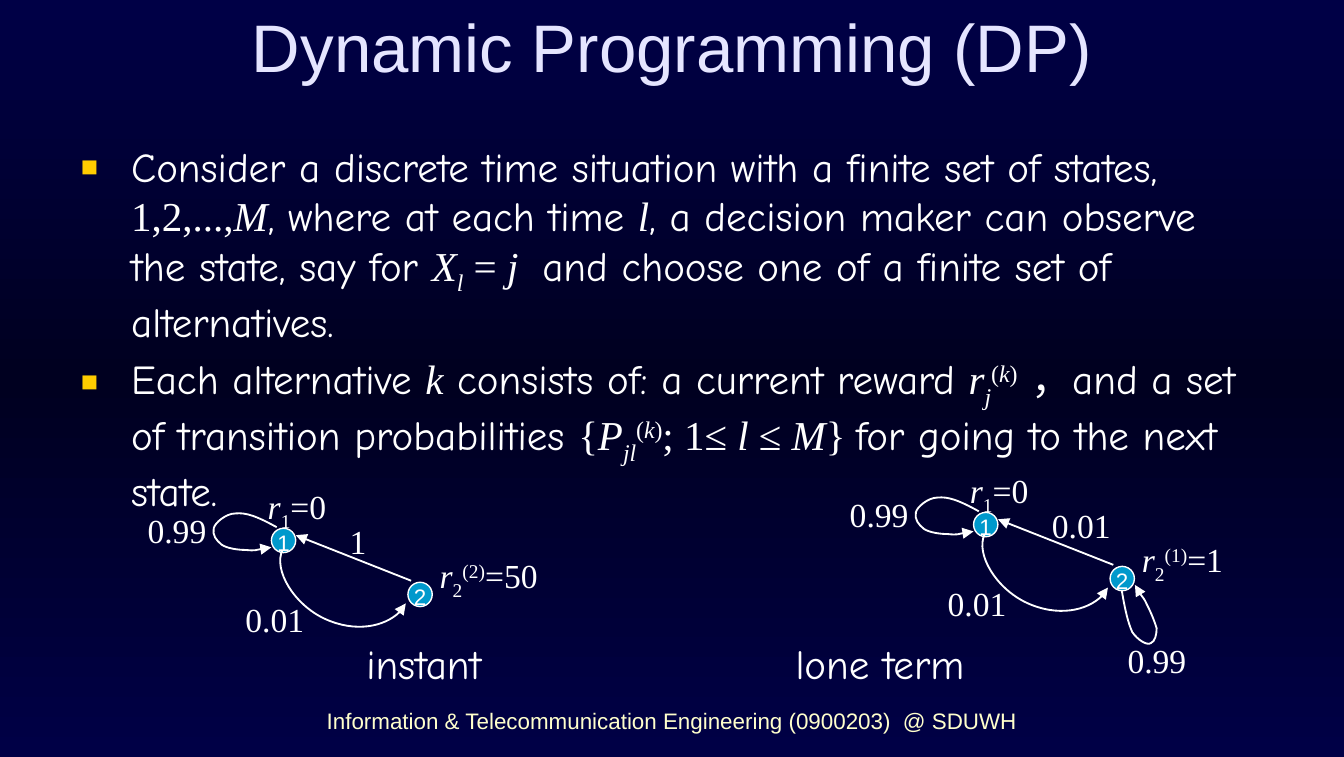
import copy
import dataclasses

import lxml.etree
import pptx
import pptx.dml.color
import pptx.enum.shapes
import pptx.enum.text
import pptx.oxml.ns
import pptx.util

Cm = pptx.util.Cm
Pt = pptx.util.Pt
qn = pptx.oxml.ns.qn
Align = pptx.enum.text.PP_ALIGN
Anchor = pptx.enum.text.MSO_ANCHOR
Fit = pptx.enum.text.MSO_AUTO_SIZE


@dataclasses.dataclass(frozen=True)
class Theme:
    edge: str = "000046"
    core: str = "000020"
    head: str = "E5E5FF"
    text: str = "FFFFFF"
    foot: str = "FFFFCC"
    mark: str = "FFCC00"
    node: str = "0099CC"
    sans: str = "Arial"
    hand: str = "Comic Neue"
    math: str = "Times New Roman"
    big: float = 36
    body: float = 22
    label: float = 18
    small: float = 12


THEME = Theme()

STATES = [
    ("Consider a discrete time situation with a finite set of states, ", "h"),
    ("1,2,...,", "m"), ("M", "i"), (", where at each time ", "h"), ("l", "i"),
    (", a decision maker can observe the state, say for ", "h"),
    ("X", "i"), ("l", "i_"), (" = ", "m"), ("j ", "i"),
    (" and choose one of a finite set of alternatives.", "h"),
]
CHOICE = [
    ("Each alternative ", "h"), ("k", "i"),
    (" consists of: a current reward ", "h"),
    ("r", "i"), ("j", "i_"), ("(", "m^"), ("k", "i^"), (")", "m^"),
    (" ，and a set of transition probabilities ", "h"),
    ("{", "m"), ("P", "i"), ("jl", "i_"), ("(", "m^"), ("k", "i^"), (")", "m^"),
    ("; 1≤ ", "m"), ("l", "i"), (" ≤ ", "m"), ("M", "i"), ("} ", "m"),
    ("for going to the next state.", "h"),
]
LOOP_1 = [
    (-0.13, -0.25), (-0.51, -0.46), (-0.71, -0.53), (-0.91, -0.51),
    (-1.09, -0.51), (-1.3, -0.33), (-1.32, -0.23), (-1.35, -0.1),
    (-1.27, 0), (-1.17, 0.08), (-1.07, 0.15), (-0.86, 0.18),
    (-0.71, 0.18), (-0.53, 0.2), (-0.3, 0.13), (-0.23, 0.13),
]
LOOP_2 = [
    (2.57, 1.24), (2.64, 1.65), (2.69, 1.85), (2.77, 2.03),
    (2.87, 2.18), (3.05, 2.29), (3.12, 2.24), (3.2, 2.21),
    (3.23, 2.08), (3.23, 1.96), (3.2, 1.85), (3.12, 1.65),
    (3.05, 1.52), (3, 1.4), (2.84, 1.22), (2.82, 1.14),
]


def color(code):
    return pptx.dml.color.RGBColor.from_string(code)


def style(run, face, size, tint):
    run.font.name = face
    run.font.size = Pt(size)
    run.font.color.rgb = color(tint)


def write(para, parts, size):
    for text, kind in parts:
        run = para.add_run()
        run.text = text
        style(run, THEME.hand if kind[0] == "h" else THEME.math, size, THEME.text)
        run.font.italic = kind[0] == "i"
        if kind[1:]:
            shift = {"_": "-25000", "^": "30000"}[kind[1]]
            run.font._element.set("baseline", shift)


def bullet(para):
    props = para._p.get_or_add_pPr()
    props.set("marL", str(Cm(0.95)))
    props.set("indent", str(-Cm(0.95)))
    tint = lxml.etree.SubElement(props, qn("a:buClr"))
    lxml.etree.SubElement(tint, qn("a:srgbClr"), val=THEME.mark)
    lxml.etree.SubElement(props, qn("a:buSzPct"), val="70000")
    lxml.etree.SubElement(props, qn("a:buFont"), typeface=THEME.sans)
    lxml.etree.SubElement(props, qn("a:buChar"), char="■")


def add_box(shapes, x, y, wide, high, wrap=True):
    box = shapes.add_textbox(Cm(x), Cm(y), Cm(wide), Cm(high))
    box.text_frame.word_wrap = wrap
    return box.text_frame


def add_line(shapes, x, y, wide, high, face, size, tint, text):
    frame = add_box(shapes, x, y, wide, high)
    frame.text = text
    frame.paragraphs[0].alignment = Align.CENTER
    style(frame.paragraphs[0].runs[0], face, size, tint)
    return frame


def add_label(shapes, x, y, wide, parts):
    frame = add_box(shapes, x, y, wide, 1.02, wrap=False)
    frame.auto_size = Fit.SHAPE_TO_FIT_TEXT
    write(frame.paragraphs[0], parts, THEME.label)


def add_node(shapes, x, y, text):
    size = 0.46
    oval = pptx.enum.shapes.MSO_SHAPE.OVAL
    node = shapes.add_shape(oval, Cm(x - size / 2), Cm(y - size / 2), Cm(size), Cm(size))
    node.shadow.inherit = False
    node.fill.solid()
    node.fill.fore_color.rgb = color(THEME.node)
    node.line.color.rgb = color(THEME.text)
    node.line.width = Pt(0.75)
    frame = node.text_frame
    frame.margin_left = frame.margin_right = frame.margin_top = frame.margin_bottom = 0
    frame.vertical_anchor = Anchor.TOP
    frame.text = text
    para = frame.paragraphs[0]
    para.alignment = Align.CENTER
    para.line_spacing = Pt(13)
    style(para.runs[0], THEME.sans, THEME.small, THEME.text)


def arrow(shape):
    shape.line.color.rgb = color(THEME.text)
    shape.line.width = Pt(1)
    line = shape.line._get_or_add_ln()
    lxml.etree.SubElement(line, qn("a:tailEnd"), type="triangle")


def add_link(shapes, kind, start, end):
    link = shapes.add_connector(kind, *map(Cm, start + end))
    arrow(link)
    lxml.etree.SubElement(link._element.spPr, qn("a:effectLst"))
    return link


def add_arc(shapes, x, y):
    wide, high = 0.07, 2.54
    kind = pptx.enum.shapes.MSO_CONNECTOR.CURVE
    start = (x + wide / 2, y + high / 2)
    end = (x - wide / 2, y - high / 2)
    props = add_link(shapes, kind, start, end)._element.spPr
    props.find(qn("a:xfrm")).set("rot", str(115 * 60000))
    guides = props.find(qn("a:prstGeom")).find(qn("a:avLst"))
    lxml.etree.SubElement(guides, qn("a:gd"), name="adj1", fmla="val -1200000")


def add_loop(shapes, x, y, spots):
    points = [(Cm(x + dx), Cm(y + dy)) for dx, dy in spots]
    maker = shapes.build_freeform(*points[0])
    maker.add_line_segments(points[1:], close=False)
    loop = maker.convert_to_shape()
    loop.shadow.inherit = False
    loop.fill.background()
    arrow(loop)
    steps = list(loop._element.iter(qn("a:lnTo")))
    track = steps[0].getparent()
    for i in range(0, len(steps), 3):
        curve = lxml.etree.SubElement(track, qn("a:cubicBezTo"))
        for step in steps[i:i + 3]:
            curve.append(step[0])
            track.remove(step)


def add_graph(slide, x, y, back, power, gain, wide, stay):
    shapes = slide.shapes.add_group_shape().shapes
    add_node(shapes, x, y, "1")
    add_node(shapes, x + 2.58, y + 1.02, "2")
    kind = pptx.enum.shapes.MSO_CONNECTOR.STRAIGHT
    add_link(shapes, kind, (x + 2.41, y + 0.76), (x + 0.23, y - 0.1))
    add_loop(shapes, x, y, LOOP_1)
    add_arc(shapes, x + 1.14, y + 0.69)
    add_label(shapes, x - 2.82, y - 0.7, 1.63, [("0.99", "m")])
    add_label(shapes, x + 1, y - 0.49, 0.84 if back == "1" else 1.63, [(back, "m")])
    add_label(shapes, x - 0.97, y + 0.97, 1.63, [("0.01", "m")])
    add_label(shapes, x - 0.55, y - 1.15, 1.65, [("r", "i"), ("1", "m_"), ("=0", "m")])
    add_label(shapes, x + 2.7, y + 0.15, wide,
              [("r", "i"), ("2", "m_"), (power, "m^"), (gain, "m")])
    if stay:
        add_loop(shapes, x, y, LOOP_2)
        add_label(shapes, x + 2.43, y + 2.05, 1.63, [(stay, "m")])


def paint(slide):
    fill = slide.background.fill
    fill.gradient()
    fill.gradient_angle = 90
    stops = next(slide._element.iter(qn("a:gsLst")))
    stops.append(copy.deepcopy(stops[0]))
    tints = (THEME.edge, THEME.core, THEME.edge)
    for i, (stop, tint) in enumerate(zip(fill.gradient_stops, tints)):
        stop.position = i / 2
        stop.color.rgb = color(tint)


def add_title(slide, text):
    title = slide.shapes.title
    title.left, title.top, title.width, title.height = map(Cm, (1.27, 0.16, 22.86, 1.42))
    frame = title.text_frame
    frame.text = text
    frame.auto_size = Fit.NONE
    frame.vertical_anchor = Anchor.MIDDLE
    frame.paragraphs[0].alignment = Align.CENTER
    style(frame.paragraphs[0].runs[0], THEME.sans, THEME.big, THEME.head)


def main():
    deck = pptx.Presentation()
    deck.slide_width, deck.slide_height = Cm(25.4), Cm(14.3)
    slide = deck.slides.add_slide(deck.slide_layouts[5])
    paint(slide)
    add_title(slide, "Dynamic Programming (DP)")
    frame = add_box(slide.shapes, 1.28, 2.55, 22.8, 7.3)
    for i, parts in enumerate((STATES, CHOICE)):
        para = frame.add_paragraph() if i else frame.paragraphs[0]
        bullet(para)
        if i:
            para.space_before = Pt(THEME.body * 0.2)
        write(para, parts, THEME.body)
    for x, text in ((8.01, "instant"), (16.63, "lone term")):
        add_line(slide.shapes, x - 2.5, 11.93, 5, 1.1,
                 THEME.hand, THEME.body, THEME.text, text)
    foot = add_line(slide.shapes, 5.29, 13.35, 14.83, 0.64, THEME.sans, THEME.small,
                    THEME.foot, "Information & Telecommunication Engineering (0900203)  @ SDUWH")
    foot.vertical_anchor = Anchor.BOTTOM
    add_graph(slide, 5.36, 10.21, "1", "(2)", "=50", 2.49, None)
    add_graph(slide, 18.63, 9.91, "0.01", "(1)", "=1", 2.16, "0.99")
    deck.save("out.pptx")


if __name__ == "__main__":
    main()
